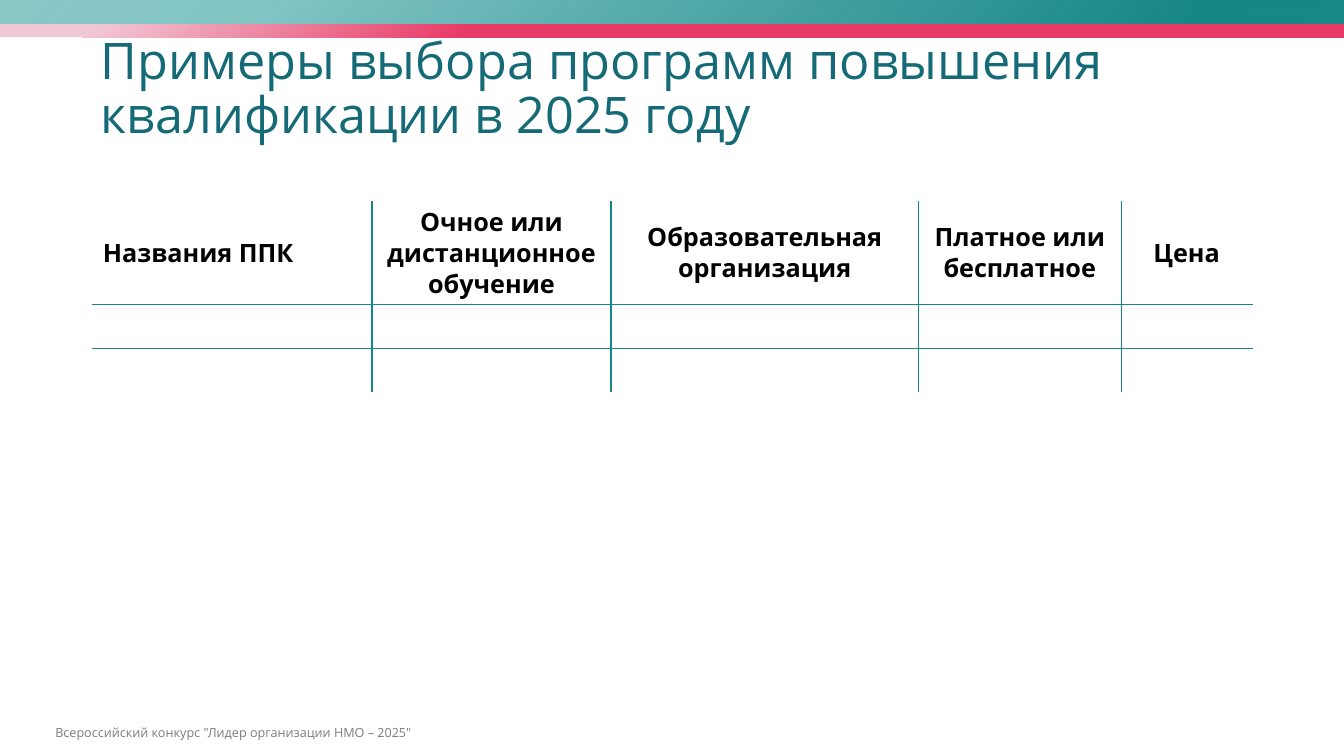
from lxml import etree
from pptx import Presentation
from pptx.dml.color import RGBColor
from pptx.enum.shapes import MSO_SHAPE
from pptx.enum.text import MSO_ANCHOR, MSO_AUTO_SIZE, PP_ALIGN
from pptx.oxml import parse_xml
from pptx.oxml.ns import nsdecls, qn
from pptx.util import Inches, Pt

RECTANGLE = MSO_SHAPE.RECTANGLE
MIDDLE = MSO_ANCHOR.MIDDLE
NO_AUTOFIT = MSO_AUTO_SIZE.NONE
LEFT, CENTER = PP_ALIGN.LEFT, PP_ALIGN.CENTER

FONT = "Open Sans"
COLORS = {
    "title": "146A76",
    "text": "000000",
    "footer": "7C7C7C",
    "grid": "168686",
    "outer": "FFFFFF",
}
TEAL_STOPS = [(0, "198888", 100), (11, "168686", 100), (80, "83C5C5", 100), (100, "83C5C5", 93)]
PINK_STOPS = [(65, "E83A66", 100), (93, "F1C8D6", 100), (100, "F1C8D6", 100)]

HEADINGS = [
    "Названия ППК",
    "Очное или дистанционное обучение",
    "Образовательная организация",
    "Платное или бесплатное",
    "Цена",
]
COLUMN_WIDTHS = [2.77, 2.37, 3.05, 2.01, 1.3]
ROW_HEIGHTS = [1.02, 0.44, 0.44]


def style_paragraph(paragraph, size, color, bold=False, align=LEFT, spacing=None):
    paragraph.alignment = align
    paragraph.line_spacing = spacing
    for part in [paragraph, *paragraph.runs]:
        part.font.name = FONT
        part.font.size = Pt(size)
        part.font.bold = bold
        part.font.color.rgb = RGBColor.from_string(COLORS[color])


def add_band(slide, box, stops):
    band = slide.shapes.add_shape(RECTANGLE, *map(Inches, box))
    band.shadow.inherit = False
    band.line.fill.background()
    band.fill.background()
    stop_xml = "".join(
        f'<a:gs pos="{position * 1000}"><a:srgbClr val="{color}">'
        f'<a:alpha val="{opacity * 1000}"/></a:srgbClr></a:gs>'
        for position, color, opacity in stops
    )
    gradient = parse_xml(
        f'<a:gradFill {nsdecls("a")} rotWithShape="1"><a:gsLst>{stop_xml}</a:gsLst>'
        '<a:path path="circle"><a:fillToRect l="100000" t="100000"/></a:path></a:gradFill>'
    )
    properties = band.element.spPr
    properties.replace(properties.find(qn("a:noFill")), gradient)


def add_title(slide, box):
    title = slide.shapes.title
    title.left, title.top, title.width, title.height = map(Inches, box)
    frame = title.text_frame
    frame.text = "Примеры выбора программ повышения квалификации в 2025 году"
    frame.word_wrap = True
    frame.auto_size = NO_AUTOFIT
    frame.vertical_anchor = MIDDLE
    style_paragraph(frame.paragraphs[0], 36, "title", spacing=0.9)


def add_footer(slide, box):
    frame = slide.shapes.add_textbox(*map(Inches, box)).text_frame
    frame.word_wrap = True
    frame.text = 'Всероссийский конкурс "Лидер организации НМО – 2025"'
    style_paragraph(frame.paragraphs[0], 9, "footer")


def set_borders(cell, outer_sides):
    properties = cell._tc.get_or_add_tcPr()
    for side, is_outer in outer_sides.items():
        border = etree.SubElement(properties, qn(f"a:ln{side}"), w=str(Pt(1)))
        fill = etree.SubElement(border, qn("a:solidFill"))
        color = COLORS["outer" if is_outer else "grid"]
        etree.SubElement(fill, qn("a:srgbClr"), val=color)


def add_programme_table(slide, left, top):
    row_count, column_count = len(ROW_HEIGHTS), len(COLUMN_WIDTHS)
    table = slide.shapes.add_table(
        row_count, column_count, Inches(left), Inches(top),
        Inches(sum(COLUMN_WIDTHS)), Inches(sum(ROW_HEIGHTS)),
    ).table
    table.first_row = False
    table.horz_banding = False
    for column, width in zip(table.columns, COLUMN_WIDTHS):
        column.width = Inches(width)
    for r, height in enumerate(ROW_HEIGHTS):
        table.rows[r].height = Inches(height)
        for c, heading in enumerate(HEADINGS):
            cell = table.cell(r, c)
            set_borders(cell, {
                "L": c == 0,
                "R": c == column_count - 1,
                "T": r == 0,
                "B": r == row_count - 1,
            })
            cell.fill.background()
            cell.vertical_anchor = MIDDLE
            if r == 0:
                cell.text_frame.text = heading
            style_paragraph(
                cell.text_frame.paragraphs[0], 18, "text", bold=r == 0,
                align=CENTER if c else LEFT, spacing=0.9,
            )


def main():
    presentation = Presentation()
    presentation.slide_width = Inches(13.33)
    presentation.slide_height = Inches(7.5)
    slide = presentation.slides.add_slide(presentation.slide_layouts[5])
    add_footer(slide, (0.45, 7.14, 12.83, 0.25))
    add_title(slide, (0.9, 0.17, 11.5, 1.45))
    add_programme_table(slide, 0.92, 2)
    add_band(slide, (0, -0.02, 13.33, 0.26), TEAL_STOPS)
    add_band(slide, (0, 0.24, 13.33, 0.13), PINK_STOPS)
    presentation.save("out.pptx")


if __name__ == "__main__":
    main()
